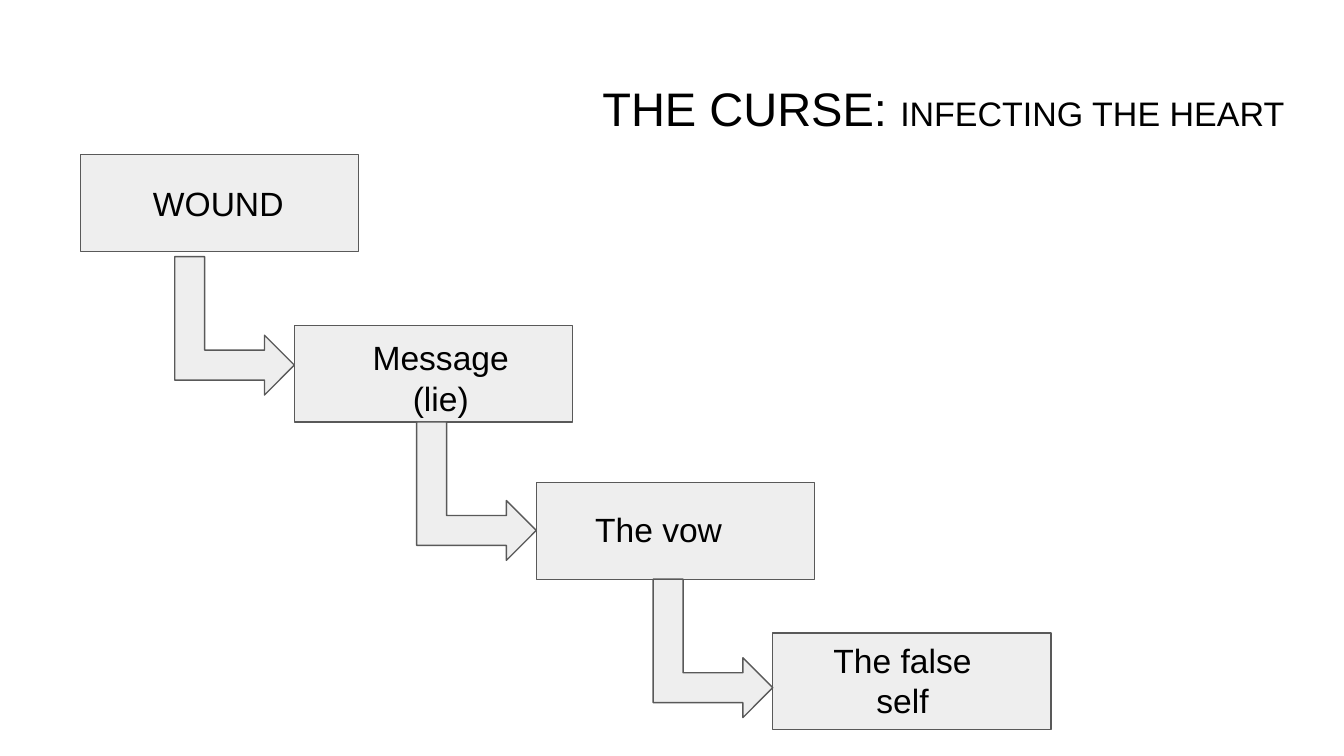
"""Build the slide showing how the curse infects the heart, step by step."""
import dataclasses
import typing

import pptx
import pptx.dml.color
import pptx.enum.shapes
import pptx.enum.text
import pptx.util

Inches = pptx.util.Inches
Pt = pptx.util.Pt
Shape = pptx.enum.shapes.MSO_SHAPE
Align = pptx.enum.text.PP_ALIGN
Anchor = pptx.enum.text.MSO_ANCHOR
AutoSize = pptx.enum.text.MSO_AUTO_SIZE

BLACK = pptx.dml.color.RGBColor(0x00, 0x00, 0x00)
WHITE = pptx.dml.color.RGBColor(0xFF, 0xFF, 0xFF)
PALE_GRAY = pptx.dml.color.RGBColor(0xEE, 0xEE, 0xEE)
DARK_GRAY = pptx.dml.color.RGBColor(0x59, 0x59, 0x59)

SLIDE_WIDTH = Inches(10)
SLIDE_HEIGHT = SLIDE_WIDTH * 9 // 16
STEP_WIDTH, STEP_HEIGHT = 2.07, 0.72
ARROW_WIDTH, ARROW_HEIGHT = 1.03, 0.89
ARROW_OFFSET = 0.96
FRAME_FORMAT = {
    "word_wrap": True,
    "margin_left": Inches(0.1),
    "margin_top": Inches(0.1),
    "margin_right": Inches(0.1),
    "margin_bottom": Inches(0.1),
}


@dataclasses.dataclass(frozen=True)
class Step:
    left: float
    top: float
    lines: tuple[str, ...]
    label: tuple[float, float, float, float]
    align: typing.Any = Align.LEFT
    arrow_top: float | None = None


STEPS = (
    Step(0.6, 1.15, ("WOUND",), (1.04, 1.26, 1.2, 0.53)),
    Step(2.19, 2.42, ("Message", "(lie)"), (2.56, 2.41, 1.44, 0.83), Align.CENTER, 1.98),
    Step(3.99, 3.59, ("The vow",), (4.33, 3.69, 1.34, 0.53), arrow_top=3.21),
    Step(5.75, 4.71, ("The false self",), (5.97, 4.66, 1.49, 0.83), Align.CENTER, 4.38),
)


def apply_format(target: typing.Any, values: dict[str, typing.Any]) -> None:
    for name, value in values.items():
        setattr(target, name, value)


def add_span(para: typing.Any, text: str, size: float) -> None:
    span = para.add_run()
    span.text = text
    apply_format(span.font, {"name": "Arial", "size": Pt(size), "bold": False})
    span.font.color.rgb = BLACK


def add_block(page: typing.Any, kind: typing.Any, left: float, top: float,
              width: float, height: float) -> typing.Any:
    block = page.shapes.add_shape(kind, Inches(left), Inches(top), Inches(width), Inches(height))
    block.shadow.inherit = False
    block.fill.solid()
    block.fill.fore_color.rgb = PALE_GRAY
    block.line.color.rgb = DARK_GRAY
    block.line.width = Pt(0.75)
    return block


def add_label(page: typing.Any, step: Step) -> None:
    box = page.shapes.add_textbox(*(Inches(length) for length in step.label))
    frame = box.text_frame
    apply_format(frame, FRAME_FORMAT | {"auto_size": AutoSize.SHAPE_TO_FIT_TEXT})
    for index, line in enumerate(step.lines):
        para = frame.add_paragraph() if index else frame.paragraphs[0]
        para.alignment = step.align
        add_span(para, line, 18)


def add_step(page: typing.Any, step: Step) -> None:
    add_block(page, Shape.RECTANGLE, step.left, step.top, STEP_WIDTH, STEP_HEIGHT)
    if step.arrow_top is not None:
        arrow = add_block(page, Shape.BENT_UP_ARROW, step.left - ARROW_OFFSET, step.arrow_top,
                          ARROW_WIDTH, ARROW_HEIGHT)
        arrow.rotation = 90
    add_label(page, step)


def add_title(page: typing.Any) -> None:
    title = page.shapes.title
    apply_format(title, {"left": Inches(0.34), "top": Inches(0.49),
                         "width": Inches(9.32), "height": Inches(0.63)})
    frame = title.text_frame
    apply_format(frame, FRAME_FORMAT | {"auto_size": AutoSize.NONE,
                                        "vertical_anchor": Anchor.MIDDLE})
    para = frame.paragraphs[0]
    para.alignment = Align.RIGHT
    add_span(para, "THE CURSE: ", 25.2)
    add_span(para, "INFECTING THE HEART", 18.2)


def main() -> None:
    deck = pptx.Presentation()
    apply_format(deck, {"slide_width": SLIDE_WIDTH, "slide_height": SLIDE_HEIGHT})
    page = deck.slides.add_slide(deck.slide_layouts.get_by_name("Title Only"))
    page.background.fill.solid()
    page.background.fill.fore_color.rgb = WHITE
    add_title(page)
    for step in STEPS:
        add_step(page, step)
    deck.save("out.pptx")


if __name__ == "__main__":
    main()
